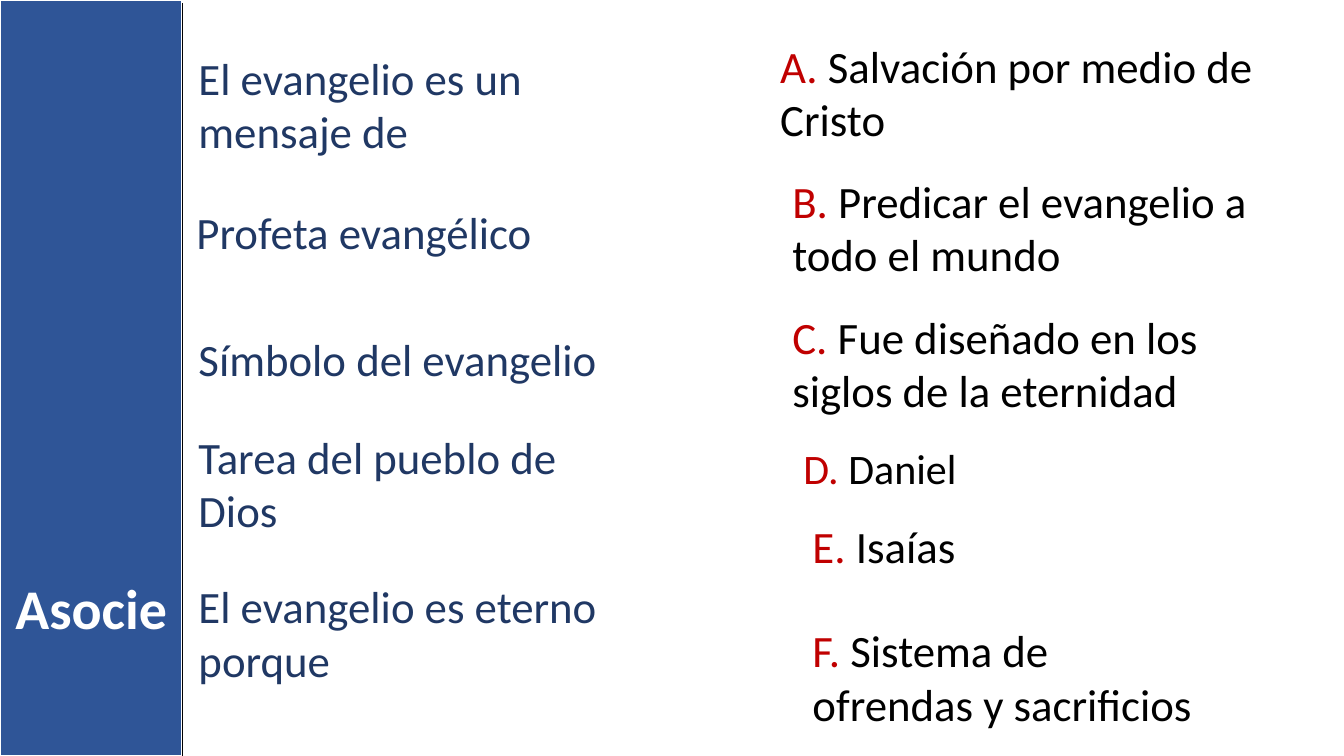
from pptx import Presentation
from pptx.dml.color import RGBColor
from pptx.enum.shapes import MSO_CONNECTOR, MSO_SHAPE
from pptx.enum.text import MSO_AUTO_SIZE, PP_ALIGN
from pptx.oxml.ns import qn
from pptx.util import Inches, Pt
from lxml import etree

BLUE = RGBColor(0x2F, 0x55, 0x97)
NAVY = RGBColor(0x20, 0x38, 0x64)
RED = RGBColor(0xC0, 0x00, 0x00)
BLACK = RGBColor(0x00, 0x00, 0x00)
WHITE = RGBColor(0xFF, 0xFF, 0xFF)

SLIDE_WIDTH, SLIDE_HEIGHT = 13.33, 7.5
SIDEBAR_WIDTH = 1.81
ANSWERS_LEFT = 7.64
ONE_LINE, TWO_LINES = 0.64, 1.18

# Text, left offset in the column, top, width, height
PROMPTS = [
    ("El evangelio es un mensaje de", 0.06, 0.45, 4.94, TWO_LINES),
    ("Profeta evangélico", 0.04, 1.98, 5.16, ONE_LINE),
    ("Símbolo del evangelio", 0.06, 3.24, 5.1, ONE_LINE),
    ("Tarea del pueblo de Dios", 0.06, 4.21, 4.5, TWO_LINES),
    ("El evangelio es eterno porque", 0.06, 5.69, 4.78, TWO_LINES),
]

# Letter, text, left offset in the column, top, width, height, size
ANSWERS = [
    ("A. ", "Salvación por medio de Cristo", 0, 0.33, 5, TWO_LINES, 32),
    ("B. ", "Predicar el evangelio a todo el mundo", 0.12, 1.67, 5.04, TWO_LINES, 32),
    ("C. ", "Fue diseñado en los siglos de la eternidad", 0.12, 3.02, 4.88, TWO_LINES, 32),
    ("D. ", "Daniel", 0.23, 4.34, 3.04, 0.61, 30),
    ("E. ", "Isaías", 0.32, 5.1, 2.86, ONE_LINE, 32),
    ("F. ", "Sistema de ofrendas y sacrificios", 0.32, 6.13, 4.15, TWO_LINES, 32),
]


def add_text(slide, left, top, width, height, runs, size, bold=False, align=PP_ALIGN.LEFT):
    """Place one paragraph made of (text, colour) runs."""
    box = slide.shapes.add_textbox(Inches(left), Inches(top), Inches(width), Inches(height))
    box.text_frame.word_wrap = True
    box.text_frame.auto_size = MSO_AUTO_SIZE.SHAPE_TO_FIT_TEXT
    paragraph = box.text_frame.paragraphs[0]
    paragraph.alignment = align
    for text, colour in runs:
        run = paragraph.add_run()
        run.text = text
        run.font.name = "Calibri"
        run.font.size = Pt(size)
        run.font.bold = bold
        run.font.color.rgb = colour


def add_sidebar(slide, left, top, width, height):
    # Blue band
    band = slide.shapes.add_shape(
        MSO_SHAPE.RECTANGLE, Inches(left), Inches(top), Inches(width), Inches(height))
    band.shadow.inherit = False
    band.fill.solid()
    band.fill.fore_color.rgb = BLUE
    band.line.color.rgb = WHITE
    band.line.width = Pt(1.5)

    # Title
    add_text(slide, left, top + 5.64, width, 0.77, [("Asocie", WHITE)], 40,
             bold=True, align=PP_ALIGN.CENTER)

    # Right edge
    edge = slide.shapes.add_connector(
        MSO_CONNECTOR.STRAIGHT, Inches(left + width), Inches(top + 0.03),
        Inches(left + width), Inches(top + height))
    edge.line.color.rgb = BLACK
    edge.line.width = Pt(1)
    etree.SubElement(edge._element.spPr, qn("a:effectLst"))


def add_prompts(slide, left, top):
    for text, offset, y, width, height in PROMPTS:
        add_text(slide, left + offset, top + y, width, height, [(text, NAVY)], 32)


def add_answers(slide, left, top):
    for letter, text, offset, y, width, height, size in ANSWERS:
        add_text(slide, left + offset, top + y, width, height,
                 [(letter, RED), (text, BLACK)], size)


def main():
    presentation = Presentation()
    presentation.slide_width = Inches(SLIDE_WIDTH)
    presentation.slide_height = Inches(SLIDE_HEIGHT)
    slide = presentation.slides.add_slide(presentation.slide_layouts[6])
    add_sidebar(slide, 0, 0, SIDEBAR_WIDTH, SLIDE_HEIGHT)
    add_prompts(slide, SIDEBAR_WIDTH, 0)
    add_answers(slide, ANSWERS_LEFT, 0)
    presentation.save("out.pptx")


if __name__ == "__main__":
    main()
